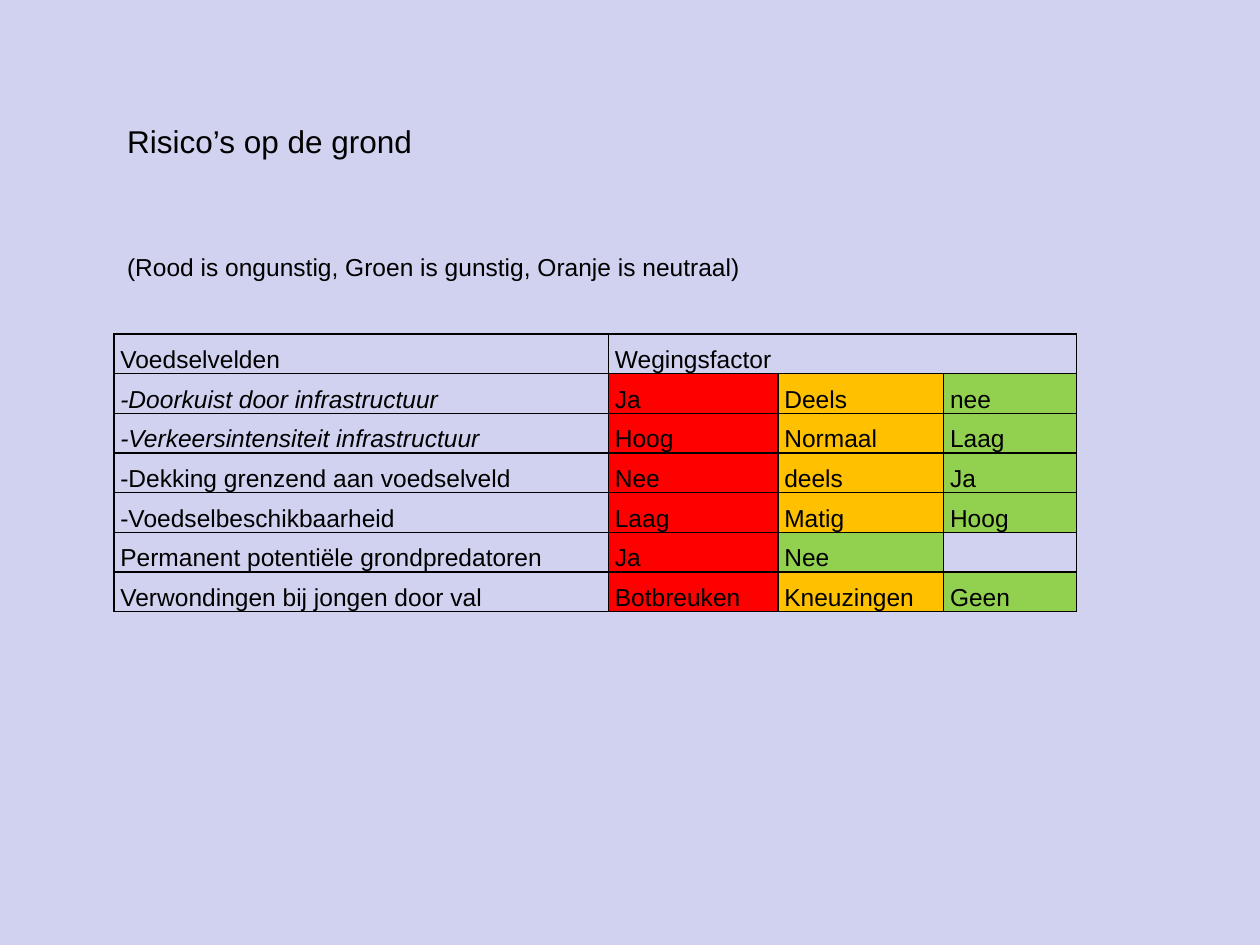
import pptx
import pptx.util
import pptx.dml.color
import pptx.enum.text
import pptx.oxml
import pptx.oxml.ns

COLORS = {"back": "D1D1F0", "ink": "000000", "R": "FF0000", "O": "FFC000", "G": "92D050"}
ROWS = [
    ("-Doorkuist door infrastructuur", "Ja", "Deels", "nee"),
    ("-Verkeersintensiteit infrastructuur", "Hoog", "Normaal", "Laag"),
    ("-Dekking grenzend aan voedselveld", "Nee", "deels", "Ja"),
    ("-Voedselbeschikbaarheid", "Laag", "Matig", "Hoog"),
    ("Permanent potentiële grondpredatoren", "Ja", "Nee", ""),
    ("Verwondingen bij jongen door val", "Botbreuken", "Kneuzingen", "Geen"),
]
TINTS = [" ROG"] * 4 + [" RG ", " ROG"]
SLANT = {1, 2}


def tint(key):
    return pptx.dml.color.RGBColor.from_string(COLORS[key])


class Page:
    """Style and current slide, measured on a grid of 100 columns by 75 rows."""

    def __init__(self, deck):
        self.font, self.size = "Arial", 14
        self.col, self.row = deck.slide_width / 100, deck.slide_height / 75
        self.slide = deck.slides.add_slide(deck.slide_layouts[5])
        fill = self.slide.background.fill
        fill.solid()
        fill.fore_color.rgb = tint("back")

    def box(self, x, y, w, h):
        return int(x * self.col), int(y * self.row), int(w * self.col), int(h * self.row)

    def words(self, frame, text, size, slant=False):
        para = frame.paragraphs[0]
        para.text = text
        para.alignment = pptx.enum.text.PP_ALIGN.LEFT
        font = para.font
        font.name, font.size, font.italic = self.font, pptx.util.Pt(size), slant
        font.color.rgb = tint("ink")
        return para

    def title(self, text, *area):
        shape = self.slide.shapes.title
        shape.left, shape.top, shape.width, shape.height = self.box(*area)
        frame = shape.text_frame
        frame.word_wrap = False
        frame.auto_size = pptx.enum.text.MSO_AUTO_SIZE.NONE
        frame.vertical_anchor = pptx.enum.text.MSO_ANCHOR.TOP
        self.words(frame, text, 18)

    def label(self, text, *area):
        frame = self.slide.shapes.add_textbox(*self.box(*area)).text_frame
        frame.word_wrap = False
        frame.vertical_anchor = pptx.enum.text.MSO_ANCHOR.MIDDLE
        self.words(frame, text, self.size)

    def edge(self, cell):
        props = cell._tc.get_or_add_tcPr()
        for spot, side in enumerate("LRTB"):
            props.insert(spot, pptx.oxml.parse_xml(
                f'<a:ln{side} {pptx.oxml.ns.nsdecls("a")} w="12700"><a:solidFill>'
                f'<a:srgbClr val="{COLORS["ink"]}"/></a:solidFill></a:ln{side}>'))

    def cell(self, cell, text, key, slant):
        cell.margin_left = cell.margin_right = pptx.util.Inches(0.05)
        cell.margin_top = cell.margin_bottom = 0
        cell.vertical_anchor = pptx.enum.text.MSO_ANCHOR.BOTTOM
        if key == " ":
            cell.fill.background()
        else:
            cell.fill.solid()
            cell.fill.fore_color.rgb = tint(key)
        self.edge(cell)
        if text:
            self.words(cell.text_frame, text, self.size, slant).line_spacing = 1.15

    def table(self, x, y, cols, h, rows, tints, slants):
        area = self.box(x, y, sum(cols), h)
        grid = self.slide.shapes.add_table(len(rows), len(cols), *area).table
        grid.first_row = grid.horz_banding = False
        for column, wide in zip(grid.columns, cols):
            column.width = int(wide * self.col)
        for r, (texts, keys) in enumerate(zip(rows, tints)):
            for c, (text, key) in enumerate(zip(texts, keys)):
                self.cell(grid.cell(r, c), text, key, r in slants and c == 0)
        grid.cell(0, 1).merge(grid.cell(0, len(cols) - 1))


def main():
    deck = pptx.Presentation()
    deck.slide_width, deck.slide_height = pptx.util.Inches(10), pptx.util.Inches(7.5)
    page = Page(deck)
    head = ("Voedselvelden", "Wegingsfactor", "", "")
    page.table(9.05, 26.5, (39.25, 13.45, 13.15, 10.55), 22.05,
               [head] + ROWS, [" " * 4] + TINTS, SLANT)
    page.title("Risico’s op de grond", 9.1, 9.2, 24.8, 4)
    page.label("(Rood is ongunstig, Groen is gunstig, Oranje is neutraal)",
               9.1, 19.4, 50.9, 3.6)
    deck.save("out.pptx")


if __name__ == "__main__":
    main()
